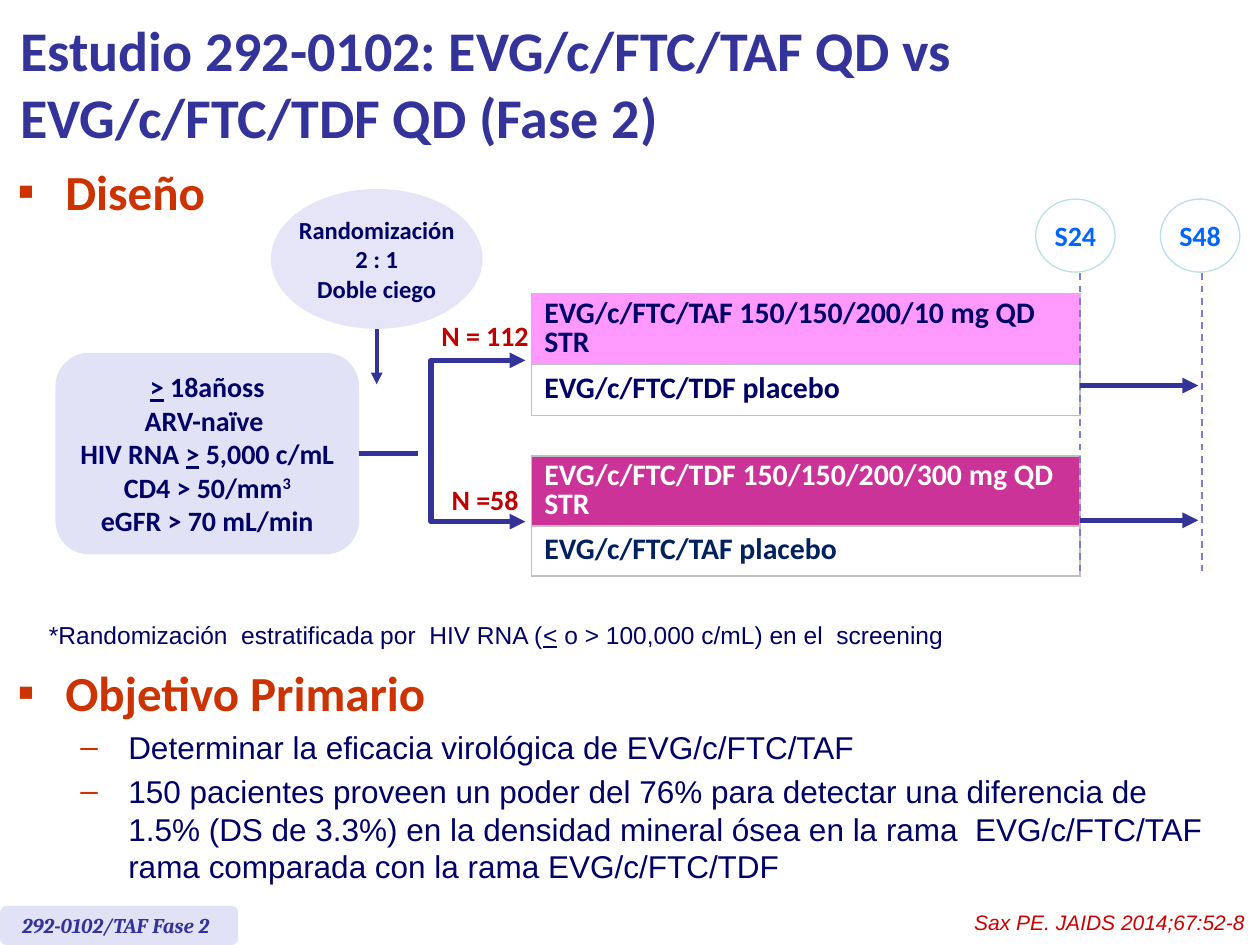
from lxml.etree import SubElement
from pptx import Presentation
from pptx.dml.color import RGBColor
from pptx.enum.dml import MSO_LINE
from pptx.enum.shapes import MSO_CONNECTOR, MSO_SHAPE
from pptx.enum.text import MSO_ANCHOR, MSO_AUTO_SIZE, PP_ALIGN
from pptx.oxml.ns import qn
from pptx.util import Inches, Pt

C = {"indigo": "333399", "navy": "000066", "rust": "CC3300", "red": "C00000",
     "cite": "CC0000", "lilac": "E2E2F6", "oval": "E5E5F7", "pink": "FF99FF",
     "magenta": "CC3399", "white": "FFFFFF", "deep": "002060", "grey": "C0C0C0",
     "blue": "0066FF", "aqua": "BBE0E3", "dash": "7E7ED4"}
COLS, ROWS = 100, 75


def rgb(name):
    return RGBColor.from_string(C[name])


def cells(*values):
    return [Inches(v / 10) for v in values]


def add_runs(p, runs, size, color, font="Calibri", bold=True, italic=False):
    for run in runs:
        text, style = run if isinstance(run, tuple) else (run, "")
        r = p.add_run()
        r.text = text
        f = r.font
        f.name, f.size, f.bold, f.italic = font, Pt(size), bold, italic
        f.color.rgb = rgb(color)
        if style == "under":
            f.underline = True
        if style == "super":
            r._r.get_or_add_rPr().set("baseline", "30000")


def fill_text(tf, lines, size, color, align=PP_ALIGN.LEFT, wrap=True,
              anchor=MSO_ANCHOR.TOP, **font):
    tf.word_wrap = wrap
    tf.vertical_anchor = anchor
    for i, runs in enumerate(lines):
        p = tf.paragraphs[0] if i == 0 else tf.add_paragraph()
        p.alignment = align
        add_runs(p, runs, size, color, **font)


def add_label(s, box, lines, size, color, **kw):
    sp = s.shapes.add_textbox(*cells(*box))
    fill_text(sp.text_frame, lines, size, color, **kw)


def add_block(s, kind, box, fill, line=None):
    sp = s.shapes.add_shape(kind, *cells(*box))
    sp.shadow.inherit = False
    sp.fill.solid()
    sp.fill.fore_color.rgb = rgb(fill)
    if line:
        sp.line.color.rgb = rgb(line)
        sp.line.width = Pt(0.75)
    else:
        sp.line.fill.background()
    return sp


def add_arrowheads(sp, *ends):
    for end in ends:
        SubElement(sp.line._get_or_add_ln(), qn(f"a:{end}"), type="triangle")


def add_line(s, start, end, color="indigo", width=3, arrow=False, dash=False):
    cn = s.shapes.add_connector(MSO_CONNECTOR.STRAIGHT, *cells(*start, *end))
    cn.line.color.rgb = rgb(color)
    cn.line.width = Pt(width)
    if dash:
        cn.line.dash_style = MSO_LINE.DASH
    if arrow:
        add_arrowheads(cn, "tailEnd")
    SubElement(cn._element.spPr, qn("a:effectLst"))
    return cn


def add_bullet(p, char, left):
    pPr = p._p.get_or_add_pPr()
    pPr.set("marL", str(Inches(left)))
    pPr.set("indent", str(Inches(-0.38)))
    SubElement(SubElement(pPr, qn("a:buClr")), qn("a:srgbClr"), val=C["rust"])
    SubElement(pPr, qn("a:buFont"), typeface="Arial")
    SubElement(pPr, qn("a:buChar"), char=char)


def place_title(s, x, y, w, h):
    sp = s.shapes.title
    sp.left, sp.top, sp.width, sp.height = cells(x, y, w, h)
    tf = sp.text_frame
    tf.auto_size = MSO_AUTO_SIZE.NONE
    fill_text(tf, [["Estudio 292-0102: EVG/c/FTC/TAF QD vs EVG/c/FTC/TDF QD (Fase 2)"]],
              32, "indigo", anchor=MSO_ANCHOR.MIDDLE)


def place_section(s, x, y, w, h, heading, points=()):
    tf = s.shapes.add_textbox(*cells(x, y, w, h)).text_frame
    tf.word_wrap = True
    p = tf.paragraphs[0]
    add_bullet(p, "▪", 0.38)
    add_runs(p, [heading], 28, "rust")
    for point in points:
        p = tf.add_paragraph()
        p.level = 1
        p.space_before = Pt(3.6)
        add_bullet(p, "–", 0.88)
        add_runs(p, [point], 18, "navy", font="Arial", bold=False)


def place_enrolment(s, x, y, w, h):
    oval = add_block(s, MSO_SHAPE.OVAL, (x + 17.1, y, 16.8, 11.1), "oval")
    fill_text(oval.text_frame, [["Randomización"], ["2 : 1"], ["Doble ciego"]],
              14, "navy", PP_ALIGN.CENTER, False, MSO_ANCHOR.MIDDLE)
    add_line(s, (x + 25.5, y + 11.1), (x + 25.5, y + 15.5), width=2.25, arrow=True)

    criteria = add_block(s, MSO_SHAPE.ROUNDED_RECTANGLE, (x, y + h - 16, 24.1, 16), "lilac")
    fill_text(criteria.text_frame,
              [[(">", "under"), " 18añoss"], ["ARV-naïve "],
               ["HIV RNA ", (">", "under"), " 5,000 c/mL"],
               ["CD4 > 50/mm", ("3", "super")], ["eGFR > 70 mL/min"]],
              16, "navy", PP_ALIGN.CENTER, False, MSO_ANCHOR.MIDDLE)
    mid = y + h - 8
    stem = add_line(s, (x + 24.1, mid), (x + w, mid))
    stem.begin_connect(criteria, 3)


def place_split(s, x, y, w, h):
    fb = s.shapes.build_freeform(*cells(x + w, y), scale=1.0)
    fb.add_line_segments([cells(*pt) for pt in ((x, y), (x, y + h), (x + w, y + h))],
                         close=False)
    sp = fb.convert_to_shape()
    sp.shadow.inherit = False
    sp.fill.background()
    sp.line.color.rgb = rgb("indigo")
    sp.line.width = Pt(3)
    add_arrowheads(sp, "headEnd", "tailEnd")
    for label, lx, ly, lw in (("N = 112", x - 0.2, y - 3.8, 9),
                              ("N =58", x + 0.6, y + h - 3.6, 7.4)):
        add_label(s, (lx, ly, lw, 3.7), [[label]], 16, "red",
                  align=PP_ALIGN.CENTER, wrap=False)


def place_arm(s, x, y, w, h, rows):
    tbl = s.shapes.add_table(len(rows), 1, *cells(x, y, w, h)).table
    tbl.first_row = tbl.horz_banding = False
    for i, (text, color, fill, share) in enumerate(rows):
        tbl.rows[i].height = Inches(h * share / 10)
        cell = tbl.cell(i, 0)
        cell.vertical_anchor = MSO_ANCHOR.MIDDLE
        p = cell.text_frame.paragraphs[0]
        p.line_spacing = 0.8
        add_runs(p, [text], 17, color)
        tcPr = cell._tc.get_or_add_tcPr()
        for side in ("lnL", "lnR", "lnT", "lnB"):
            ln = SubElement(tcPr, qn(f"a:{side}"), w=str(Pt(1)))
            SubElement(SubElement(ln, qn("a:solidFill")), qn("a:srgbClr"), val=C["grey"])
        cell.fill.solid()
        cell.fill.fore_color.rgb = rgb(fill)


def place_timeline(s, x, y, w, h):
    for label, left, guide in (("S24", x, x + 3.5), ("S48", x + w - 6.3, x + 13.2)):
        sp = add_block(s, MSO_SHAPE.OVAL, (left, y, 6.3, 5.8), "white", "aqua")
        fill_text(sp.text_frame, [[label]], 16, "blue", PP_ALIGN.CENTER, False,
                  MSO_ANCHOR.MIDDLE)
        add_line(s, (guide, y + 5.9), (guide, y + h), "dash", 1, dash=True)
    for row in (y + 14.8, y + 25.5):
        add_line(s, (x + 3.5, row), (x + 12.9, row), arrow=True)


def place_footer(s, x, y, w, h):
    tag = add_block(s, MSO_SHAPE.ROUNDED_RECTANGLE, (x, y + 0.2, 18.9, h - 0.2), "lilac")
    tag.text_frame.margin_left = Inches(0.16)
    fill_text(tag.text_frame, [["292-0102/TAF Fase 2"]], 12, "indigo",
              anchor=MSO_ANCHOR.MIDDLE, font="Cambria", italic=True)
    add_label(s, (x + w - 30.2, y, 30, 3), [["Sax PE. JAIDS 2014;67:52-8"]], 12, "cite",
              align=PP_ALIGN.RIGHT, font="Arial", bold=False, italic=True)


def main():
    prs = Presentation()
    prs.slide_width, prs.slide_height = cells(COLS, ROWS)
    s = prs.slides.add_slide(prs.slide_layouts[5])
    place_title(s, 0.6, 0.5, 95.5, 12.1)
    place_section(s, 0.4, 12.3, 19.8, 6.3, "Diseño")
    place_section(s, 0.4, 52.1, 98, 15.8, "Objetivo Primario", [
        "Determinar la eficacia virológica de EVG/c/FTC/TAF",
        "150 pacientes proveen un poder del 76% para detectar una diferencia de 1.5% "
        "(DS de 3.3%) en la densidad mineral ósea en la rama  EVG/c/FTC/TAF rama "
        "comparada con la rama EVG/c/FTC/TDF"])
    place_enrolment(s, 4.4, 15, 28.8, 29)
    place_split(s, 34.2, 28.6, 7.5, 12.8)
    place_arm(s, 42.2, 23.3, 43.5, 9.7, [
        ("EVG/c/FTC/TAF 150/150/200/10 mg QD STR", "navy", "pink", 0.58),
        ("EVG/c/FTC/TDF placebo", "navy", "white", 0.42)])
    place_arm(s, 42.2, 36.2, 43.5, 9.5, [
        ("EVG/c/FTC/TDF 150/150/200/300 mg QD STR", "white", "magenta", 0.58),
        ("EVG/c/FTC/TAF placebo", "deep", "white", 0.42)])
    place_timeline(s, 82.2, 15.8, 16.2, 29.5)
    add_label(s, (2.9, 48.7, 81, 3.4),
              [["*Randomización  estratificada por  HIV RNA (", ("<", "under"),
                " o > 100,000 c/mL) en el  screening"]],
              14, "navy", font="Arial", bold=False)
    place_footer(s, 0, 71.7, COLS, 3.3)
    prs.save("out.pptx")


if __name__ == "__main__":
    main()
